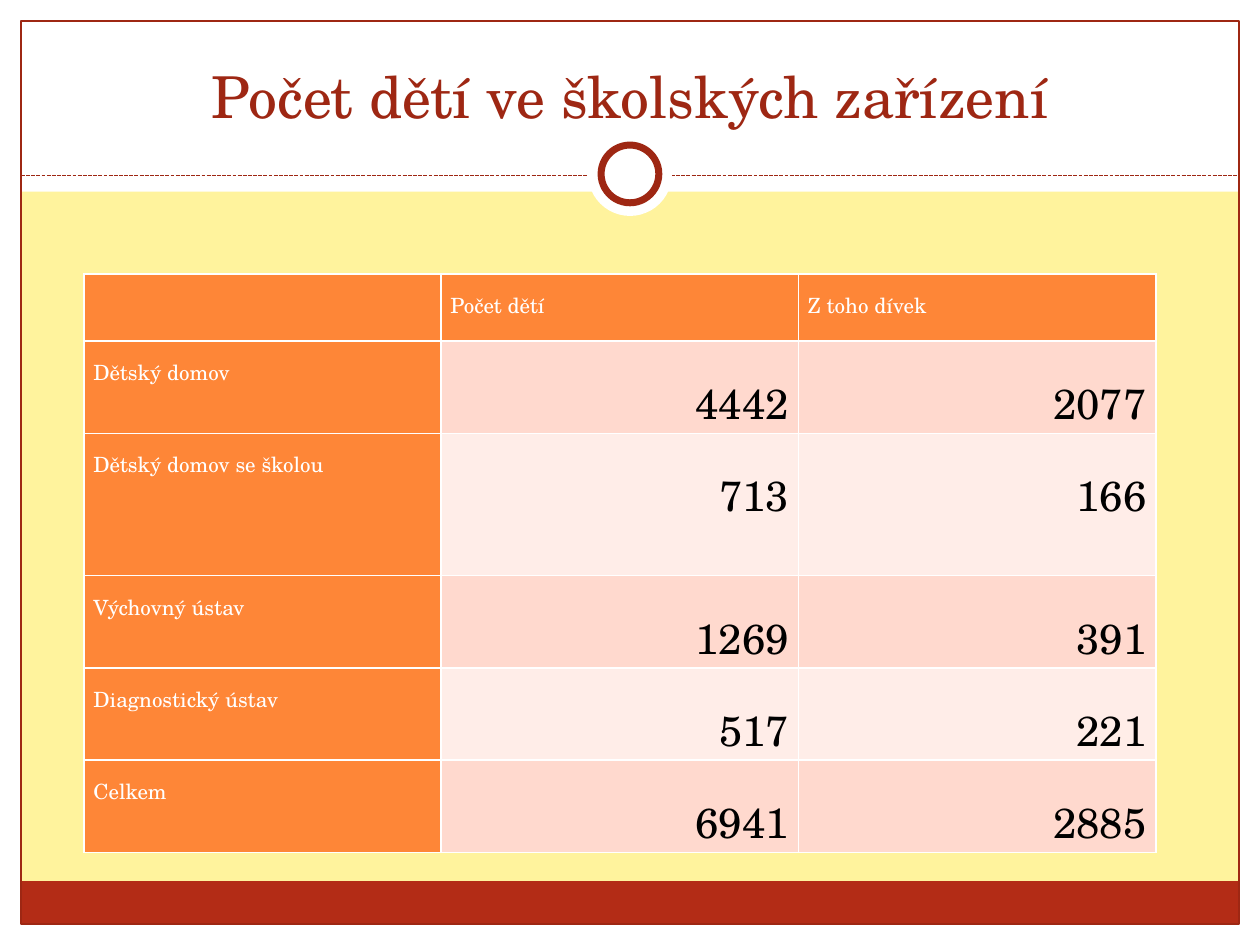
import pptx
import pptx.dml.color
import pptx.enum.dml
import pptx.enum.shapes
import pptx.enum.text
import pptx.oxml
import pptx.oxml.ns
import pptx.util
from dataclasses import dataclass

Pt = pptx.util.Pt
Align = pptx.enum.text.PP_ALIGN
Anchor = pptx.enum.text.MSO_ANCHOR
Shape = pptx.enum.shapes.MSO_SHAPE


@dataclass(frozen=True)
class Theme:
    font: str = "TeX Gyre Schola"
    background: str = "FFF39D"
    white: str = "FFFFFF"
    black: str = "000000"
    accent: str = "9E2713"
    footer: str = "B32C16"
    label_fill: str = "FE8637"
    bands: tuple = ("FFD9CE", "FFEDE8")
    title_size: int = 33
    label_size: int = 12
    value_size: int = 24


THEME = Theme()
TITLE = "Počet dětí ve školských zařízení"
HEADINGS = ["", "Počet dětí", "Z toho dívek"]
COUNTS = [
    ("Dětský domov", 4442, 2077),
    ("Dětský domov se školou", 713, 166),
    ("Výchovný ústav", 1269, 391),
    ("Diagnostický ústav", 517, 221),
    ("Celkem", 6941, 2885),
]

WIDTH, HEIGHT, MARGIN = 720, 540, 12
INNER_WIDTH, INNER_HEIGHT = WIDTH - 2 * MARGIN, HEIGHT - 2 * MARGIN
HEADER_HEIGHT, FOOTER_HEIGHT = 109.5, 24.5
RULE_Y, RING_Y = 100.5, 99.4
COLUMN_WIDTHS = [204, 204.3, 204.3]
HEADING_ROW, COUNT_ROW, TALL_ROW = 38.2, 52.7, 81.4
ROW_HEIGHTS = [HEADING_ROW, COUNT_ROW, TALL_ROW] + [COUNT_ROW] * 3
TABLE_LEFT, TABLE_TOP = 48, 156.7


def rgb(value):
    return pptx.dml.color.RGBColor.from_string(value)


def add_panel(slide, left, top, width, height, fill=None, line=None,
              line_width=0.75, kind=Shape.RECTANGLE):
    panel = slide.shapes.add_shape(kind, Pt(left), Pt(top), Pt(width), Pt(height))
    panel.shadow.inherit = False
    if fill:
        panel.fill.solid()
        panel.fill.fore_color.rgb = rgb(fill)
    else:
        panel.fill.background()
    if line:
        panel.line.color.rgb = rgb(line)
        panel.line.width = Pt(line_width)
    else:
        panel.line.fill.background()


def add_disc(slide, diameter, **style):
    add_panel(slide, (WIDTH - diameter) / 2, RING_Y - diameter / 2,
              diameter, diameter, fill=THEME.white, kind=Shape.OVAL, **style)


def write(frame, text, size, color, align=Align.LEFT, spacing=None, after=None):
    paragraph = frame.paragraphs[0]
    paragraph.alignment = align
    paragraph.line_spacing = spacing
    paragraph.space_after = None if after is None else Pt(after)
    run = paragraph.add_run()
    run.text = text
    run.font.name = THEME.font
    run.font.size = Pt(size)
    run.font.bold = False
    run.font.color.rgb = rgb(color)


def set_borders(cell):
    properties = cell._tc.get_or_add_tcPr()
    for position, edge in enumerate(("lnL", "lnR", "lnT", "lnB")):
        border = pptx.oxml.parse_xml(
            f'<a:{edge} {pptx.oxml.ns.nsdecls("a")} w="{Pt(1)}"><a:solidFill>'
            f'<a:srgbClr val="{THEME.white}"/></a:solidFill></a:{edge}>')
        properties.insert(position, border)


def add_frame(slide):
    footer_top = HEIGHT - MARGIN - FOOTER_HEIGHT
    add_panel(slide, 0, HEIGHT - MARGIN, WIDTH, MARGIN, THEME.white)
    add_panel(slide, 0, 0, WIDTH, HEADER_HEIGHT, THEME.white)
    for left in (0, WIDTH - MARGIN):
        add_panel(slide, left, 0, MARGIN, HEIGHT, THEME.white)
    add_panel(slide, MARGIN, footer_top, INNER_WIDTH, FOOTER_HEIGHT, THEME.footer)
    add_panel(slide, MARGIN, MARGIN, INNER_WIDTH, INNER_HEIGHT, line=THEME.accent)

    rule = slide.shapes.add_connector(
        pptx.enum.shapes.MSO_CONNECTOR.STRAIGHT,
        Pt(MARGIN), Pt(RULE_Y), Pt(WIDTH - MARGIN), Pt(RULE_Y))
    rule.line.color.rgb = rgb(THEME.accent)
    rule.line.width = Pt(0.75)
    rule.line.dash_style = pptx.enum.dml.MSO_LINE.SQUARE_DOT
    rule._element.spPr.append(
        pptx.oxml.parse_xml(f'<a:effectLst {pptx.oxml.ns.nsdecls("a")}/>'))

    add_disc(slide, 48)
    add_disc(slide, 33, line=THEME.accent, line_width=4)


def add_title(slide):
    title = slide.shapes.add_textbox(Pt(24), Pt(18), Pt(672), Pt(60)).text_frame
    title.word_wrap = True
    title.vertical_anchor = Anchor.BOTTOM
    write(title, TITLE, THEME.title_size, THEME.accent, align=Align.CENTER)


def add_counts(slide):
    rows = [HEADINGS, *COUNTS]
    counts = slide.shapes.add_table(
        len(rows), len(HEADINGS), Pt(TABLE_LEFT), Pt(TABLE_TOP),
        Pt(sum(COLUMN_WIDTHS)), Pt(sum(ROW_HEIGHTS))).table
    counts.first_row = counts.horz_banding = False
    for column, width in zip(counts.columns, COLUMN_WIDTHS):
        column.width = Pt(width)
    for row, height in zip(counts.rows, ROW_HEIGHTS):
        row.height = Pt(height)

    for r, row in enumerate(rows):
        for c, entry in enumerate(row):
            cell = counts.cell(r, c)
            is_label = r == 0 or c == 0
            cell.fill.solid()
            cell.fill.fore_color.rgb = rgb(
                THEME.label_fill if is_label else THEME.bands[(r - 1) % 2])
            cell.margin_left = cell.margin_right = Pt(5.4)
            cell.margin_top = cell.margin_bottom = 0
            set_borders(cell)
            if entry != "":
                write(cell.text_frame, str(entry),
                      size=THEME.label_size if is_label else THEME.value_size,
                      color=THEME.white if is_label else THEME.black,
                      align=Align.LEFT if is_label else Align.RIGHT,
                      spacing=1.5, after=8)


def main():
    deck = pptx.Presentation()
    deck.slide_width, deck.slide_height = Pt(WIDTH), Pt(HEIGHT)
    slide = deck.slides.add_slide(deck.slide_layouts[6])
    slide.background.fill.solid()
    slide.background.fill.fore_color.rgb = rgb(THEME.background)
    add_frame(slide)
    add_title(slide)
    add_counts(slide)
    deck.save("out.pptx")


if __name__ == "__main__":
    main()
